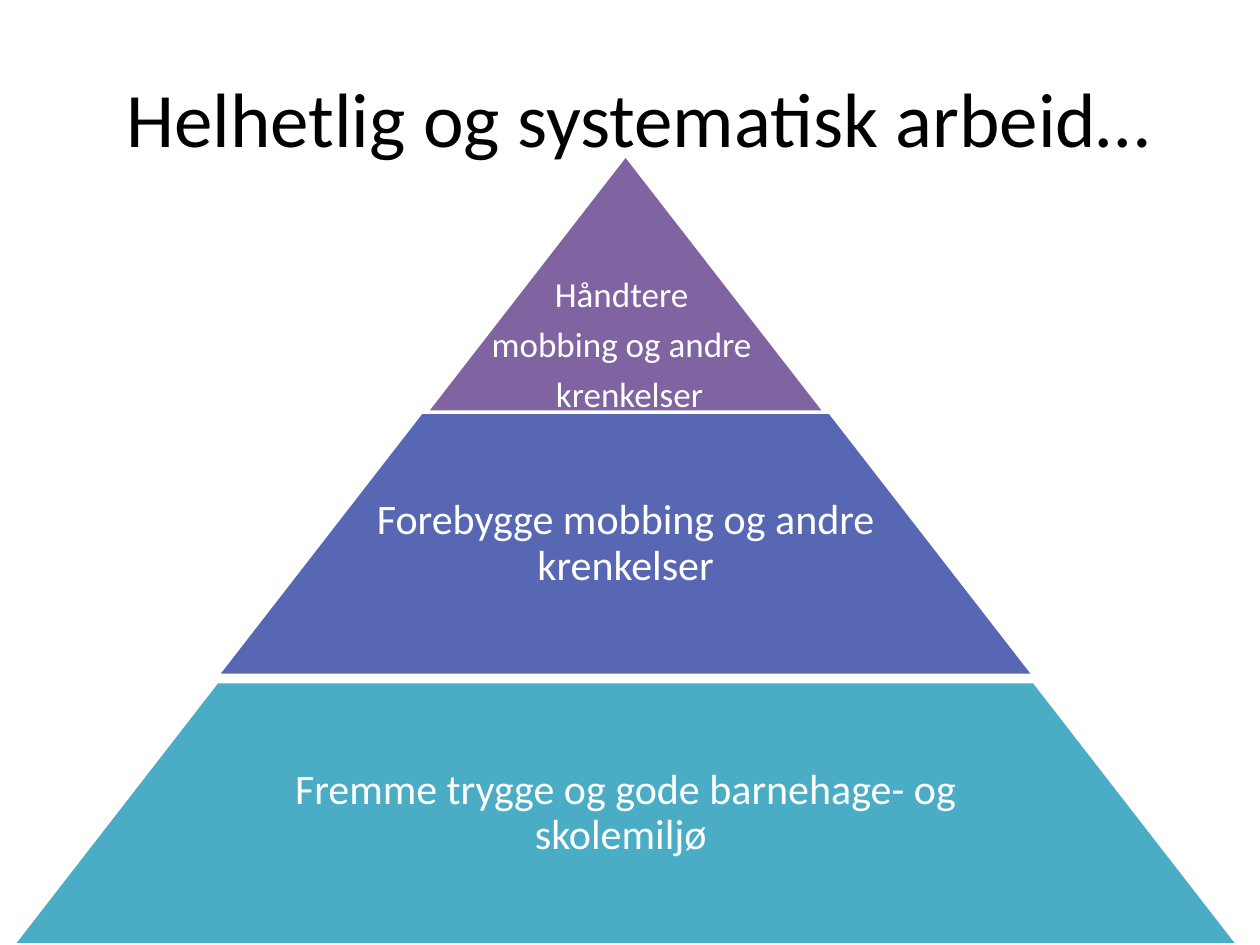
"""Build a slide with a three-level pyramid of work against bullying."""
from dataclasses import dataclass

from pptx import Presentation
from pptx.dml.color import RGBColor
from pptx.enum import shapes, text
from pptx.util import Pt

COLOURS = {
    "title": "000000",
    "label": "FFFFFF",
    "edge": "FFFFFF",
    "handle": "8064A2",
    "prevent": "5767B4",
    "promote": "4BACC6",
}
FONT = "Calibri"
CENTRE = 357.5
STEP = 233.5
LEVEL_HEIGHT = 150.5
SLANT = 0.776


@dataclass(frozen=True)
class Level:
    top: float
    colour: str
    lines: tuple[str, ...]
    size: float = 24
    label_share: float = 0.65
    anchor: text.MSO_ANCHOR = text.MSO_ANCHOR.MIDDLE


LEVELS = (
    Level(88.5, "handle", ("Håndtere ", "mobbing og andre ", " krenkelser"),
          20, 1, text.MSO_ANCHOR.BOTTOM),
    Level(235.5, "prevent", ("Forebygge mobbing og andre krenkelser",)),
    Level(389.5, "promote", ("Fremme trygge og gode barnehage- og skolemiljø ",)),
)


def colour(name: str) -> RGBColor:
    """Return the named colour."""
    return RGBColor.from_string(COLOURS[name])


def add_label(slide, box: tuple[float, ...], lines: tuple[str, ...], size: float,
              ink: str, anchor: text.MSO_ANCHOR, inset: float = 2,
              spacing: float = 0.9, after: float = 0.35) -> None:
    """Add centred text, one paragraph for each line."""
    frame = slide.shapes.add_textbox(*map(Pt, box)).text_frame
    frame.word_wrap = True
    frame.vertical_anchor = anchor
    frame.margin_left = frame.margin_right = Pt(inset)
    frame.margin_top = frame.margin_bottom = Pt(inset)
    frame.text = "\n".join(lines)
    for paragraph in frame.paragraphs:
        paragraph.alignment = text.PP_ALIGN.CENTER
        paragraph.line_spacing = spacing
        paragraph.space_after = Pt(size * after)
        paragraph.font.name = FONT
        paragraph.font.size = Pt(size)
        paragraph.font.color.rgb = colour(ink)


def add_level(slide, level: Level, rank: int) -> None:
    """Add one level of the pyramid with its label."""
    width = STEP * rank
    band = slide.shapes.add_shape(
        shapes.MSO_SHAPE.TRAPEZOID, Pt(CENTRE - width / 2), Pt(level.top),
        Pt(width), Pt(LEVEL_HEIGHT))
    band.adjustments[0] = SLANT
    band.shadow.inherit = False
    band.fill.solid()
    band.fill.fore_color.rgb = colour(level.colour)
    band.line.color.rgb = colour("edge")
    band.line.width = Pt(2)
    label_width = width * level.label_share
    add_label(slide, (CENTRE - label_width / 2, level.top, label_width, LEVEL_HEIGHT),
              level.lines, level.size, "label", level.anchor)


def main() -> None:
    """Build and save the slide."""
    deck = Presentation()
    deck.slide_width, deck.slide_height = Pt(720), Pt(540)
    slide = deck.slides.add_slide(deck.slide_layouts[6])
    add_label(slide, (36, 21.6, 648, 90), (" Helhetlig og systematisk arbeid…",), 44,
              "title", text.MSO_ANCHOR.MIDDLE, inset=4, spacing=1, after=0)
    for rank, level in enumerate(LEVELS, start=1):
        add_level(slide, level, rank)
    deck.save("out.pptx")


if __name__ == "__main__":
    main()
